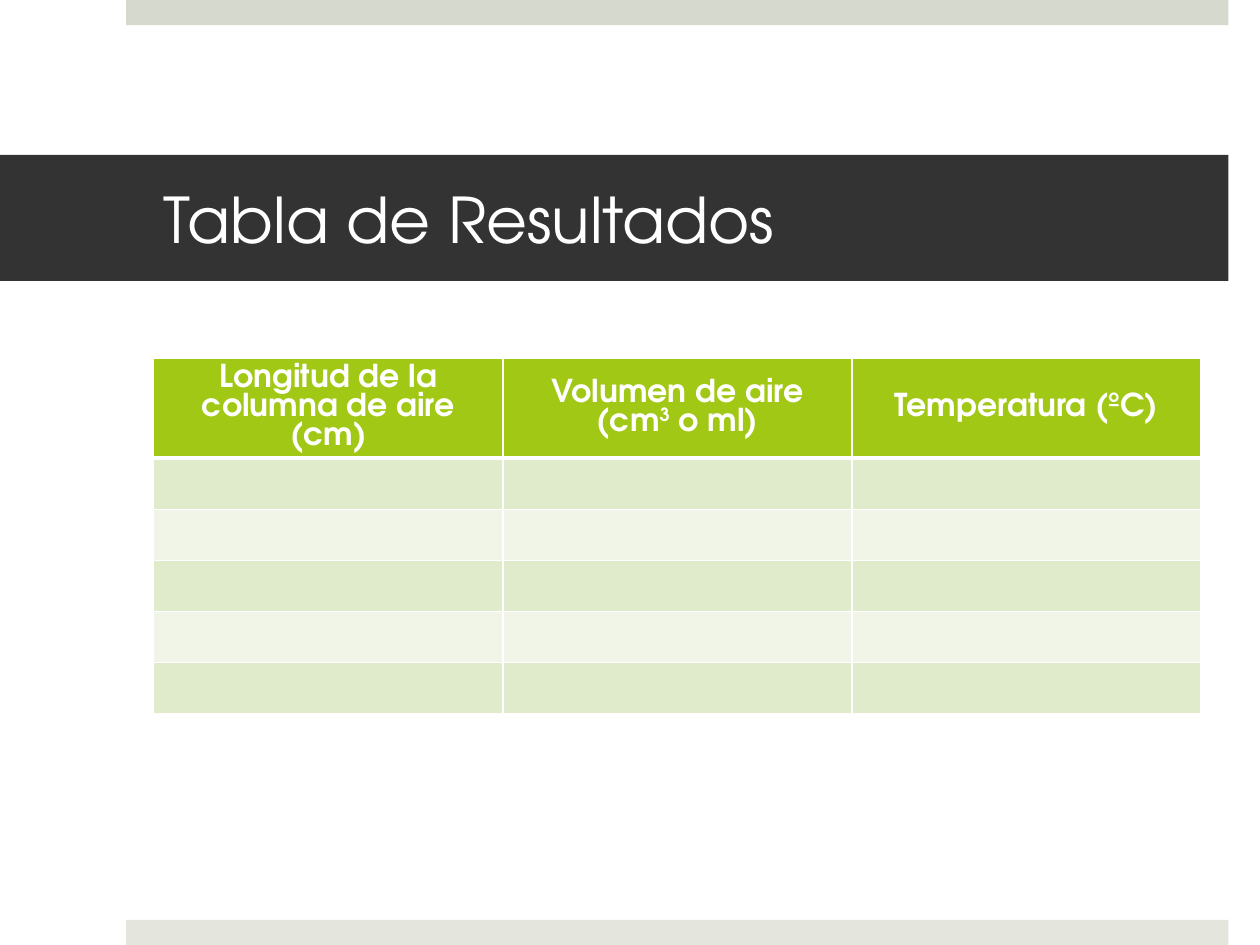
"""Build the slide with the empty results table."""
import pptx
import pptx.dml.color
import pptx.enum.shapes
import pptx.enum.text
import pptx.oxml
import pptx.oxml.ns
import pptx.util

Pt = pptx.util.Pt
ANCHOR = pptx.enum.text.MSO_ANCHOR
ALIGN = pptx.enum.text.PP_ALIGN

COLOURS = {
    "white": "FFFFFF", "top_bar": "D6D9CD", "bottom_bar": "E4E6DE", "band": "333333",
    "header": "A2C816", "odd_row": "E0EBCC", "even_row": "F0F5E8",
}
HEADINGS = [
    ["Longitud de la columna de aire (cm)"],
    ["Volumen de aire (cm", "3", " o ml)"],
    ["Temperatura (ºC)"],
]


class SlideBuilder:
    font_name = "TeX Gyre Adventor"

    def __init__(self, page):
        self.page = page

    def colour(self, name):
        return pptx.dml.color.RGBColor.from_string(COLOURS[name])

    def apply(self, target, values):
        for name, value in values.items():
            setattr(target, name, value)

    def fill(self, target, name):
        target.fill.solid()
        target.fill.fore_color.rgb = self.colour(name)

    def place(self, shape, left, top, width, height):
        values = {"left": left, "top": top, "width": width, "height": height}
        self.apply(shape, {name: Pt(value) for name, value in values.items()})

    def add_text(self, para, parts, size, bold, align):
        para.alignment = align
        for index, part in enumerate(parts):
            span = para.add_run()
            span.text = part
            self.apply(span.font, {"name": self.font_name, "size": Pt(size), "bold": bold})
            span.font.color.rgb = self.colour("white")
            if index % 2:
                span.font._element.set("baseline", "30000")

    def bar(self, top, name):
        box = self.page.shapes.add_shape(
            pptx.enum.shapes.MSO_SHAPE.RECTANGLE, Pt(72), Pt(top), Pt(630), Pt(14.4))
        box.shadow.inherit = False
        self.fill(box, name)
        box.line.fill.background()

    def title(self, text):
        box = self.page.shapes.title
        self.place(box, 0, 88.56, 702, 72)
        self.fill(box, "band")
        self.apply(box.text_frame, {
            "margin_left": Pt(93.6), "margin_right": Pt(21.6),
            "margin_top": Pt(3.6), "margin_bottom": Pt(3.6),
            "vertical_anchor": ANCHOR.MIDDLE, "word_wrap": True,
            "auto_size": pptx.enum.text.MSO_AUTO_SIZE.NONE,
        })
        self.add_text(box.text_frame.paragraphs[0], [text], 36, False, ALIGN.LEFT)

    def borders(self, cell, widths):
        properties = cell._tc.get_or_add_tcPr()
        for side, width in widths.items():
            properties.append(pptx.oxml.parse_xml(
                f'<a:ln{side} {pptx.oxml.ns.nsdecls("a")} w="{Pt(width)}"><a:solidFill>'
                f'<a:srgbClr val="{COLOURS["white"]}"/></a:solidFill></a:ln{side}>'))

    def table(self, headings, empty_rows):
        header_height, row_height = 57.1, 29.16
        grid = self.page.shapes.add_table(
            empty_rows + 1, len(headings), Pt(87.84), Pt(204.48), Pt(598.5),
            Pt(header_height + empty_rows * row_height)).table
        for index, row in enumerate(grid.rows):
            row.height = Pt(row_height if index else header_height)
            name = ("even_row", "odd_row")[index % 2] if index else "header"
            widths = {"L": 1, "R": 1, "T": 3 if index == 1 else 1, "B": 1 if index else 3}
            for cell in row.cells:
                self.borders(cell, widths)
                self.fill(cell, name)
        for cell, parts in zip(grid.rows[0].cells, headings):
            cell.vertical_anchor = ANCHOR.MIDDLE
            self.add_text(cell.text_frame.paragraphs[0], parts, 18, True, ALIGN.CENTER)


def main():
    deck = pptx.Presentation()
    deck.slide_width, deck.slide_height = Pt(720), Pt(540)
    builder = SlideBuilder(deck.slides.add_slide(deck.slide_layouts[5]))
    builder.bar(0, "top_bar")
    builder.bar(525.6, "bottom_bar")
    builder.title("Tabla de Resultados")
    builder.table(HEADINGS, 5)
    deck.save("out.pptx")


if __name__ == "__main__":
    main()
